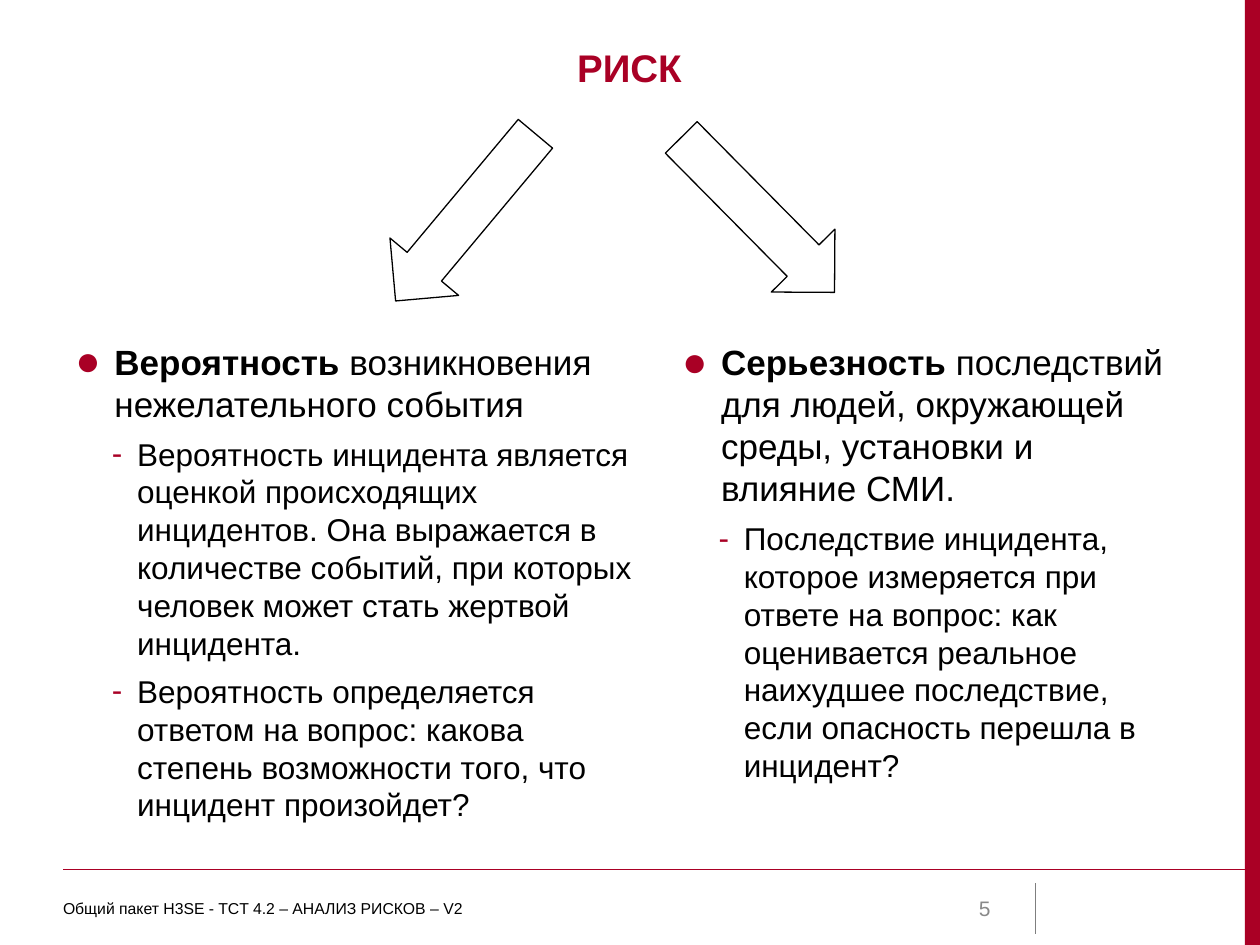
from dataclasses import dataclass
from typing import NamedTuple

import pptx
import pptx.dml.color
import pptx.enum.shapes
import pptx.enum.text
import pptx.oxml.ns
import pptx.util
from lxml import etree

SHAPE = pptx.enum.shapes.MSO_SHAPE
ALIGN = pptx.enum.text.PP_ALIGN
ANCHOR = pptx.enum.text.MSO_ANCHOR
qn = pptx.oxml.ns.qn

COLUMNS, ROWS = 20, 15
SLIDE_WIDTH, SLIDE_HEIGHT = pptx.util.Inches(10), pptx.util.Inches(7.5)


@dataclass(frozen=True)
class Theme:
    font: str = "Arial"
    band: str = "AA0025"
    accent: str = "A90025"
    ink: str = "000000"
    muted: str = "898989"
    divider: str = "7F7F7F"
    title: float = 22
    number: float = 12
    footer: float = 9
    outline: float = 0.75
    spacing: float = 3


class Area(NamedTuple):
    """Left, top, width and height in grid columns and rows."""
    left: float
    top: float
    width: float
    height: float


class Level(NamedTuple):
    size: float
    margin: float
    hanging: float
    bullet: str
    bullet_percent: int


class Point(NamedTuple):
    level: int
    text: str
    lead: str = ""


class Arrow(NamedTuple):
    area: Area
    rotation: float


THEME = Theme()
LEVELS = (Level(20, 0.31, 0.31, "●", 120), Level(18, 0.49, 0.2, "-", 100))

TITLE_AREA = Area(1, 0.6, 17.98, 1.38)
FOOTER_TOP, FOOTER_HEIGHT = 14.02, 0.8
RULE_ROW = 13.8
DIVIDER_COLUMN = 16.44

ARROWS = (
    Arrow(Area(5.66, 2.74, 3.46, 1.42), 309.9),
    Arrow(Area(10.3, 2.7, 3.46, 1.42), 225.3),
)

FACTORS = (
    (Area(1, 5.3, 9.3, 7.88), (
        Point(0, " возникновения нежелательного события", "Вероятность"),
        Point(1, "Вероятность инцидента является оценкой происходящих инцидентов. "
                 "Она выражается в количестве событий, при которых человек может "
                 "стать жертвой инцидента."),
        Point(1, "Вероятность определяется ответом на вопрос: какова степень "
                 "возможности того, что инцидент произойдет?"),
    )),
    (Area(10.63, 5.31, 8.06, 7.88), (
        Point(0, " последствий для людей, окружающей среды, установки и влияние СМИ.",
              "Серьезность"),
        Point(1, "Последствие инцидента, которое измеряется при ответе на вопрос: "
                 "как оценивается реальное наихудшее последствие, если опасность "
                 "перешла в инцидент?"),
    )),
)


def x(columns: float) -> int:
    return round(SLIDE_WIDTH * columns / COLUMNS)


def y(rows: float) -> int:
    return round(SLIDE_HEIGHT * rows / ROWS)


def box(area: Area) -> tuple[int, int, int, int]:
    return x(area.left), y(area.top), x(area.width), y(area.height)


def rgb(color: str) -> pptx.dml.color.RGBColor:
    return pptx.dml.color.RGBColor.from_string(color)


def add_run(paragraph, text: str, size: float, color: str, bold: bool = False) -> None:
    run = paragraph.add_run()
    run.text = text
    run.font.name = THEME.font
    run.font.size = pptx.util.Pt(size)
    run.font.bold = bold
    run.font.color.rgb = rgb(color)


def add_frame(slide, area: Area, anchor=ANCHOR.TOP):
    frame = slide.shapes.add_textbox(*box(area)).text_frame
    frame.word_wrap = True
    frame.vertical_anchor = anchor
    return frame


def add_label(slide, area: Area, text: str, size: float, color: str,
              align=ALIGN.LEFT, anchor=ANCHOR.MIDDLE, bold: bool = False):
    frame = add_frame(slide, area, anchor)
    frame.paragraphs[0].alignment = align
    add_run(frame.paragraphs[0], text, size, color, bold)
    return frame


def set_bullet(paragraph, level: Level) -> None:
    properties = paragraph._p.get_or_add_pPr()
    properties.set("marL", str(pptx.util.Inches(level.margin)))
    properties.set("indent", str(-pptx.util.Inches(level.hanging)))
    color = etree.SubElement(properties, qn("a:buClr"))
    etree.SubElement(color, qn("a:srgbClr"), val=THEME.accent)
    etree.SubElement(properties, qn("a:buSzPct"), val=str(level.bullet_percent * 1000))
    etree.SubElement(properties, qn("a:buFont"), typeface=THEME.font)
    etree.SubElement(properties, qn("a:buChar"), char=level.bullet)


def add_factor(slide, area: Area, points: tuple[Point, ...]) -> None:
    frame = add_frame(slide, area)
    for index, point in enumerate(points):
        paragraph = frame.add_paragraph() if index else frame.paragraphs[0]
        level = LEVELS[point.level]
        paragraph.level = point.level
        set_bullet(paragraph, level)
        paragraph.space_before = pptx.util.Pt(THEME.spacing if index else 0)
        paragraph.space_after = pptx.util.Pt(THEME.spacing)
        if point.lead:
            add_run(paragraph, point.lead, level.size, THEME.ink, bold=True)
        add_run(paragraph, point.text, level.size, THEME.ink)


def add_line(slide, start: tuple[float, float], end: tuple[float, float],
             color: str) -> None:
    line = slide.shapes.add_connector(
        pptx.enum.shapes.MSO_CONNECTOR.STRAIGHT,
        x(start[0]), y(start[1]), x(end[0]), y(end[1]))
    line.line.color.rgb = rgb(color)
    line.line.width = pptx.util.Pt(THEME.outline)
    etree.SubElement(line._element.spPr, qn("a:effectLst"))


def add_arrow(slide, arrow: Arrow) -> None:
    shape = slide.shapes.add_shape(SHAPE.LEFT_ARROW, *box(arrow.area))
    shape.rotation = arrow.rotation
    shape.shadow.inherit = False
    shape.fill.background()
    shape.line.color.rgb = rgb(THEME.ink)
    shape.line.width = pptx.util.Pt(THEME.outline)


def add_band(slide) -> None:
    band = slide.shapes.add_shape(SHAPE.RECTANGLE, *box(Area(19.76, 0, 0.24, ROWS)))
    band.shadow.inherit = False
    band.fill.solid()
    band.fill.fore_color.rgb = rgb(THEME.band)
    band.line.fill.background()


def main() -> None:
    deck = pptx.Presentation()
    deck.slide_width, deck.slide_height = SLIDE_WIDTH, SLIDE_HEIGHT
    slide = deck.slides.add_slide(deck.slide_layouts[6])

    add_band(slide)
    add_line(slide, (1, RULE_ROW), (COLUMNS, RULE_ROW), THEME.band)
    add_line(slide, (DIVIDER_COLUMN, FOOTER_TOP),
             (DIVIDER_COLUMN, FOOTER_TOP + FOOTER_HEIGHT), THEME.divider)
    add_label(slide, TITLE_AREA, "РИСК", THEME.title, THEME.accent,
              ALIGN.CENTER, ANCHOR.TOP, bold=True)
    for area, points in FACTORS:
        add_factor(slide, area, points)
    for arrow in ARROWS:
        add_arrow(slide, arrow)
    add_label(slide, Area(14.34, FOOTER_TOP, 1.58, FOOTER_HEIGHT), "5",
              THEME.number, THEME.muted, ALIGN.RIGHT)
    footer = add_label(slide, Area(1, FOOTER_TOP, 12.16, FOOTER_HEIGHT),
                       "Общий пакет H3SE - TCT 4.2 – АНАЛИЗ РИСКОВ – V2",
                       THEME.footer, THEME.ink)
    footer.margin_left = 0
    deck.save("out.pptx")


if __name__ == "__main__":
    main()
